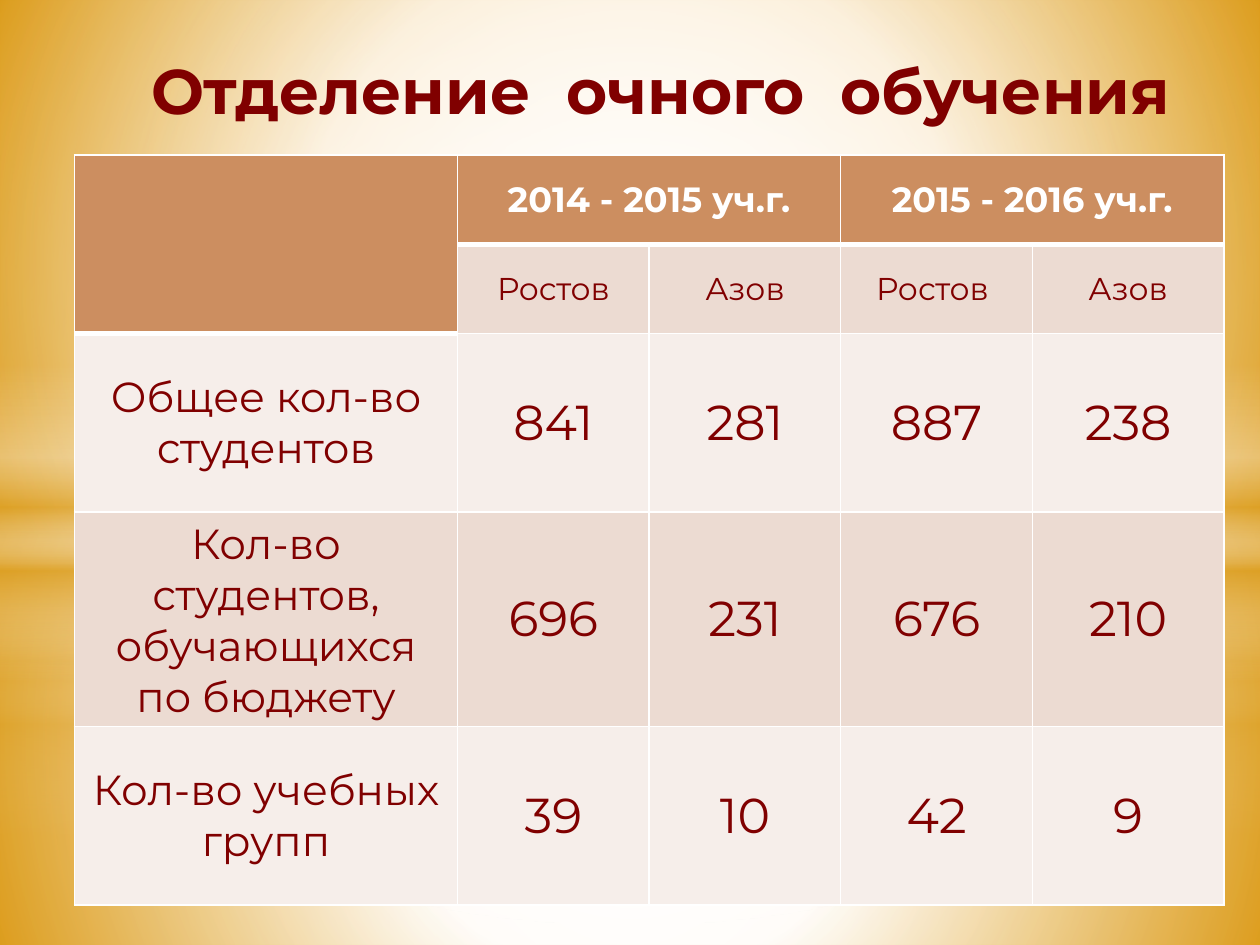
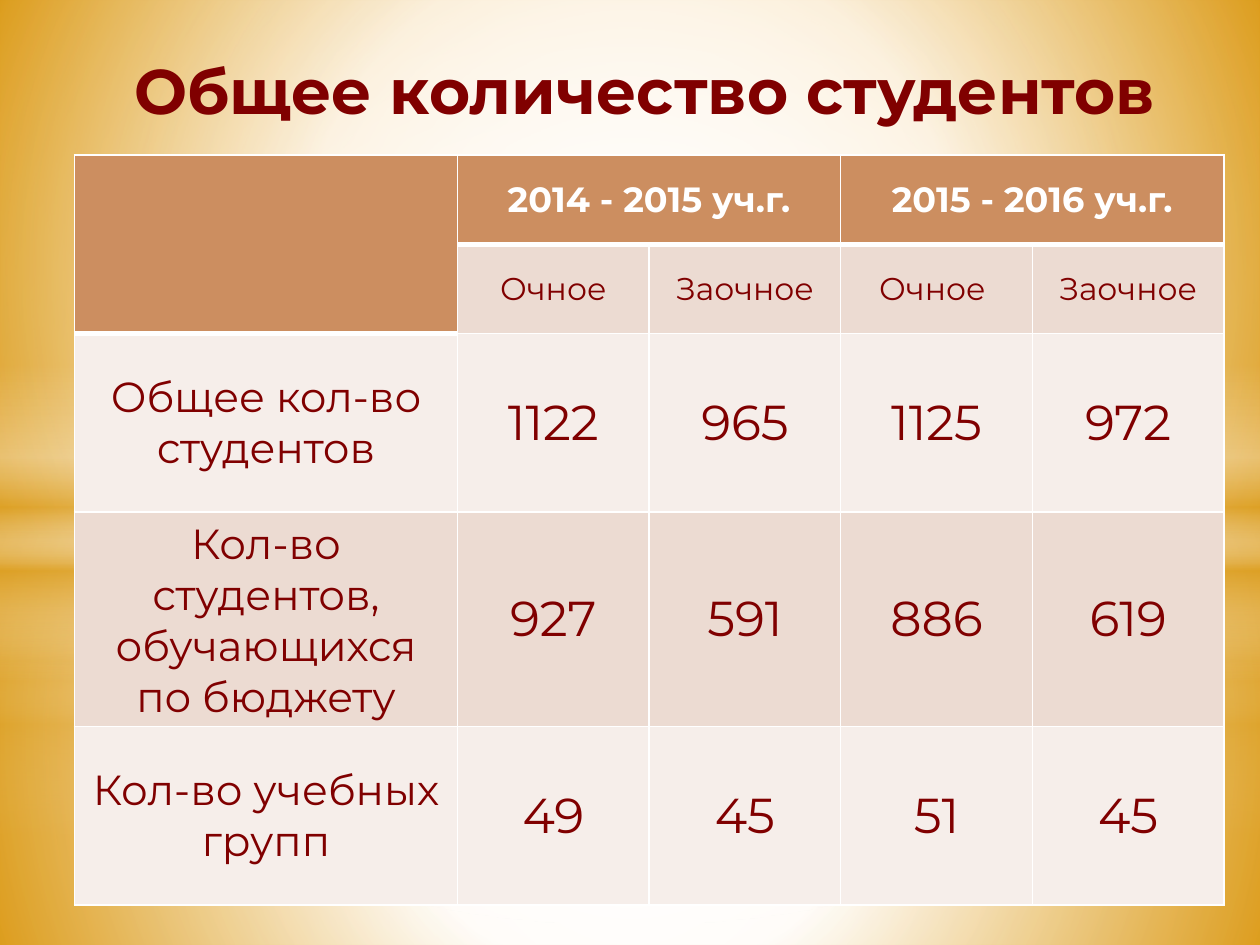
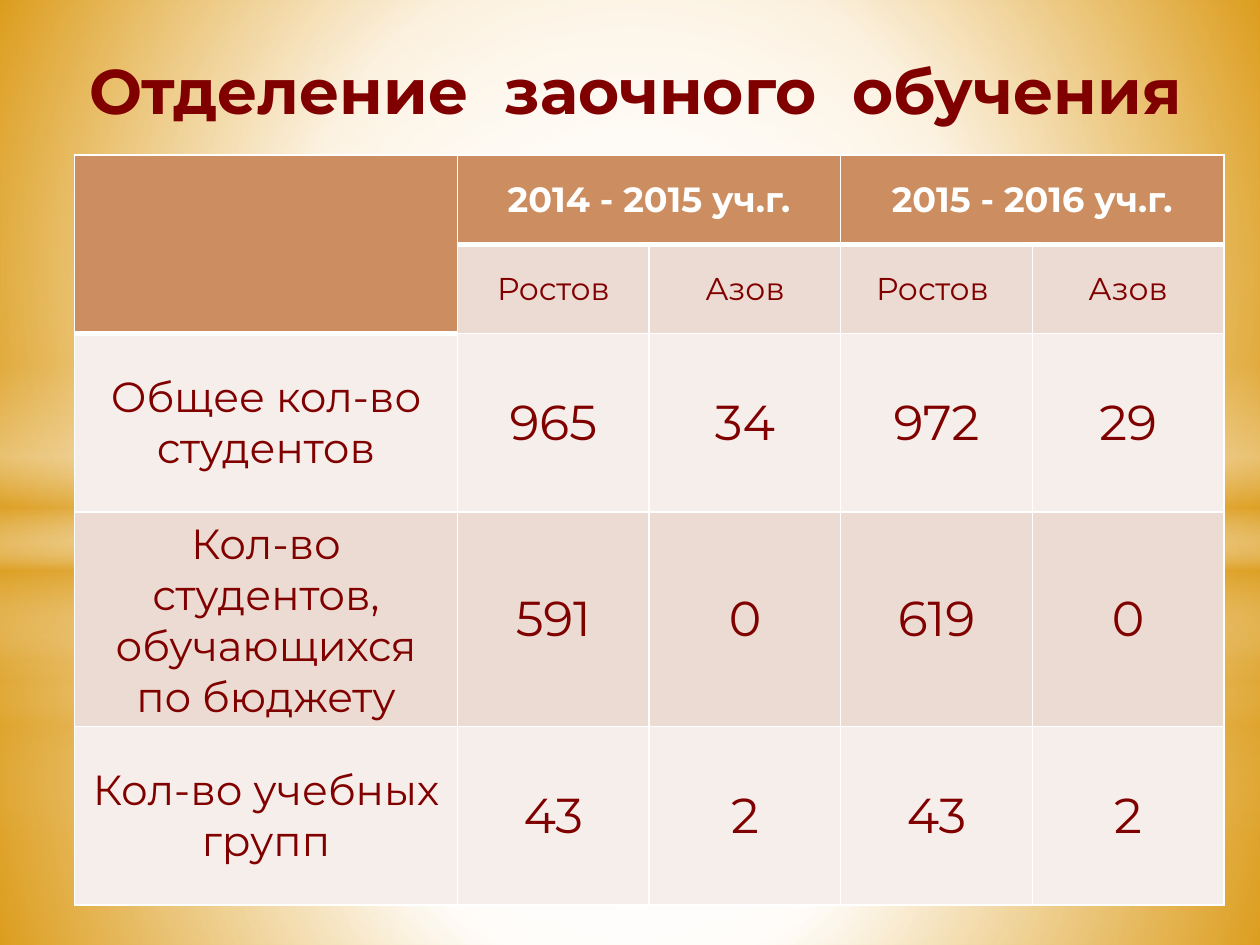
from dataclasses import dataclass

from pptx import Presentation
from pptx.dml.color import RGBColor
from pptx.enum.shapes import MSO_SHAPE as Preset
from pptx.enum.text import MSO_ANCHOR as Anchor, PP_ALIGN as Align
from pptx.oxml import parse_xml
from pptx.oxml.ns import nsdecls, qn
from pptx.util import Pt


@dataclass(frozen=True)
class Theme:
    font: str = "Montserrat"
    text: str = "800000"
    white: str = "FFFFFF"
    gold: str = "DC9E1F"
    header: str = "CC8E60"
    band_dark: str = "ECDBD2"
    band_light: str = "F6EEEA"
    title_size: int = 36
    year_size: int = 20
    group_size: int = 18
    label_size: int = 24
    value_size: int = 28


theme = Theme()
SLIDE_WIDTH, SLIDE_HEIGHT = 720, 540
CENTRE = (50, 50, 50, 50)
TITLE_RIGHT = 711.4
YEARS = ("2014 - 2015 уч.г.", "2015 - 2016 уч.г.")
LABELS = ("Общее кол-во студентов",
          "Кол-во студентов, обучающихся по бюджету",
          "Кол-во учебных групп")
COLUMN_WIDTHS = (219, 109.5, 109.5, 109.5, 109.5)
ROW_HEIGHTS = (51, 51, 102, 102, 102)


def paint_gradient(element, stops, focus=None):
    """Radial gradient around focus, or a vertical one without it."""
    stop_xml = "".join(
        f'<a:gs pos="{position * 1000}"><a:srgbClr val="{color}">'
        f'<a:alpha val="{opacity * 1000}"/></a:srgbClr></a:gs>'
        for position, color, opacity in stops)
    if focus:
        left, top, right, bottom = (side * 1000 for side in focus)
        shading = (f'<a:path path="circle"><a:fillToRect l="{left}" t="{top}" '
                   f'r="{right}" b="{bottom}"/></a:path>')
    else:
        shading = '<a:lin ang="5400000" scaled="0"/>'
    gradient = next(element.iter(qn("a:gradFill")))
    gradient.getparent().replace(gradient, parse_xml(
        f'<a:gradFill {nsdecls("a")} rotWithShape="1"><a:gsLst>{stop_xml}</a:gsLst>'
        f'{shading}</a:gradFill>'))


def write_text(frame, text, size, color, bold=False):
    paragraph = frame.paragraphs[0]
    paragraph.text = text
    paragraph.alignment = Align.CENTER
    font = paragraph.font
    font.name, font.size, font.bold = theme.font, Pt(size), bold
    font.color.rgb = RGBColor.from_string(color)


# Title, title left edge, column groups, values
pages = [
    ("Отделение  очного  обучения ", 54, ("Ростов", "Азов", "Ростов ", "Азов"),
     ((841, 281, 887, 238), (696, 231, 676, 210), (39, 10, 42, 9))),
    ("Общее количество студентов", 25.2, ("Очное", "Заочное", "Очное ", "Заочное"),
     ((1122, 965, 1125, 972), (927, 591, 886, 619), (49, 45, 51, 45))),
    ("Отделение  заочного  обучения ", 25.2, ("Ростов", "Азов", "Ростов ", "Азов"),
     ((965, 34, 972, 29), (591, 0, 619, 0), (43, 2, 43, 2))),
]

presentation = Presentation()
presentation.slide_width, presentation.slide_height = Pt(SLIDE_WIDTH), Pt(SLIDE_HEIGHT)
blank = presentation.slide_layouts[6]
for placeholder in list(blank.placeholders):
    placeholder.element.getparent().remove(placeholder.element)
slides = [presentation.slides.add_slide(blank) for _ in pages]

# Shared background
blank.background.fill.gradient()
paint_gradient(blank.element, ((0, "FFF4E3", 100), (42, "FFCC7E", 100), (100, "E79200", 100)),
               (24, 44, 24, 12))

# Shared glow layers: two passes of floor, wall, horizon and halo
horizon = ((0, theme.white, 0), (29, theme.white, 30), (45, theme.gold, 40),
           (55, theme.white, 26), (65, theme.gold, 60), (100, theme.white, 0))
layers = []
for floor_top, horizon_top, extra, halo_end in ((401.8, 296.6, 0, 56), (304.6, 208.8, 1, 54)):
    floor = [(0, theme.white, 91 + extra), (37, theme.white, 76 + extra),
             (100, theme.gold, 79 + extra)]
    wall = [(0, theme.white, 89 + extra), (48, theme.white, 62 + extra),
            (100, theme.gold, 79 + extra)]
    halo = [(0, theme.white, 100), (halo_end, theme.white, 0)]
    layers += [
        (Preset.RECTANGLE, floor_top, SLIDE_HEIGHT - floor_top, floor, CENTRE),
        (Preset.RECTANGLE, 0, floor_top, wall, CENTRE),
        (Preset.RECTANGLE, horizon_top, 180, horizon, None),
        (Preset.OVAL, 126, 401.8, halo, CENTRE),
    ]
layer_shapes = []
for preset, top, height, stops, focus in layers:
    shape = slides[0].shapes.add_shape(preset, 0, Pt(top), Pt(SLIDE_WIDTH), Pt(height))
    shape.shadow.inherit = False
    shape.line.fill.background()
    shape.fill.gradient()
    paint_gradient(shape.element, stops, focus)
    layer_shapes.append(shape)
# The layers belong to the layout, so that every slide shows them
for shape in layer_shapes:
    blank.shapes.element.append(shape.element)

for slide, (title, title_left, groups, values) in zip(slides, pages):
    # Title
    title_box = slide.shapes.add_textbox(
        Pt(title_left), Pt(25.9), Pt(TITLE_RIGHT - title_left), Pt(51))
    title_box.text_frame.word_wrap = True
    write_text(title_box.text_frame, title, theme.title_size, theme.text, bold=True)

    # Table grid
    table = slide.shapes.add_table(
        len(ROW_HEIGHTS), len(COLUMN_WIDTHS), Pt(42.5), Pt(88.6),
        Pt(sum(COLUMN_WIDTHS)), Pt(sum(ROW_HEIGHTS))).table
    for column, width in zip(table.columns, COLUMN_WIDTHS):
        column.width = Pt(width)
    for row, height in zip(table.rows, ROW_HEIGHTS):
        row.height = Pt(height)

    # Cell borders and fills
    for row in range(len(ROW_HEIGHTS)):
        for column in range(len(COLUMN_WIDTHS)):
            cell = table.cell(row, column)
            cell.vertical_anchor = Anchor.MIDDLE
            is_header = row == 0 or (row == 1 and column == 0)
            below_header = (row, column) == (2, 0) or (row == 1 and column > 0)
            widths = {"L": 1, "R": 1, "T": 3 if below_header else 1, "B": 3 if is_header else 1}
            properties = cell._tc.get_or_add_tcPr()
            for side, width in widths.items():
                properties.append(parse_xml(
                    f'<a:ln{side} {nsdecls("a")} w="{Pt(width)}"><a:solidFill>'
                    f'<a:srgbClr val="{theme.white}"/></a:solidFill></a:ln{side}>'))
            band = theme.band_dark if row % 2 else theme.band_light
            cell.fill.solid()
            cell.fill.fore_color.rgb = RGBColor.from_string(theme.header if is_header else band)

    # Header cells
    table.cell(0, 0).merge(table.cell(1, 0))
    for index, year in enumerate(YEARS):
        column = 1 + 2 * index
        table.cell(0, column).merge(table.cell(0, column + 1))
        write_text(table.cell(0, column).text_frame, year, theme.year_size, theme.white, bold=True)
    for column, group in enumerate(groups, 1):
        write_text(table.cell(1, column).text_frame, group, theme.group_size, theme.text)

    # Body cells
    for row, (label, numbers) in enumerate(zip(LABELS, values), 2):
        write_text(table.cell(row, 0).text_frame, label, theme.label_size, theme.text)
        for column, number in enumerate(numbers, 1):
            write_text(table.cell(row, column).text_frame, str(number),
                       theme.value_size, theme.text)

presentation.save("out.pptx")
